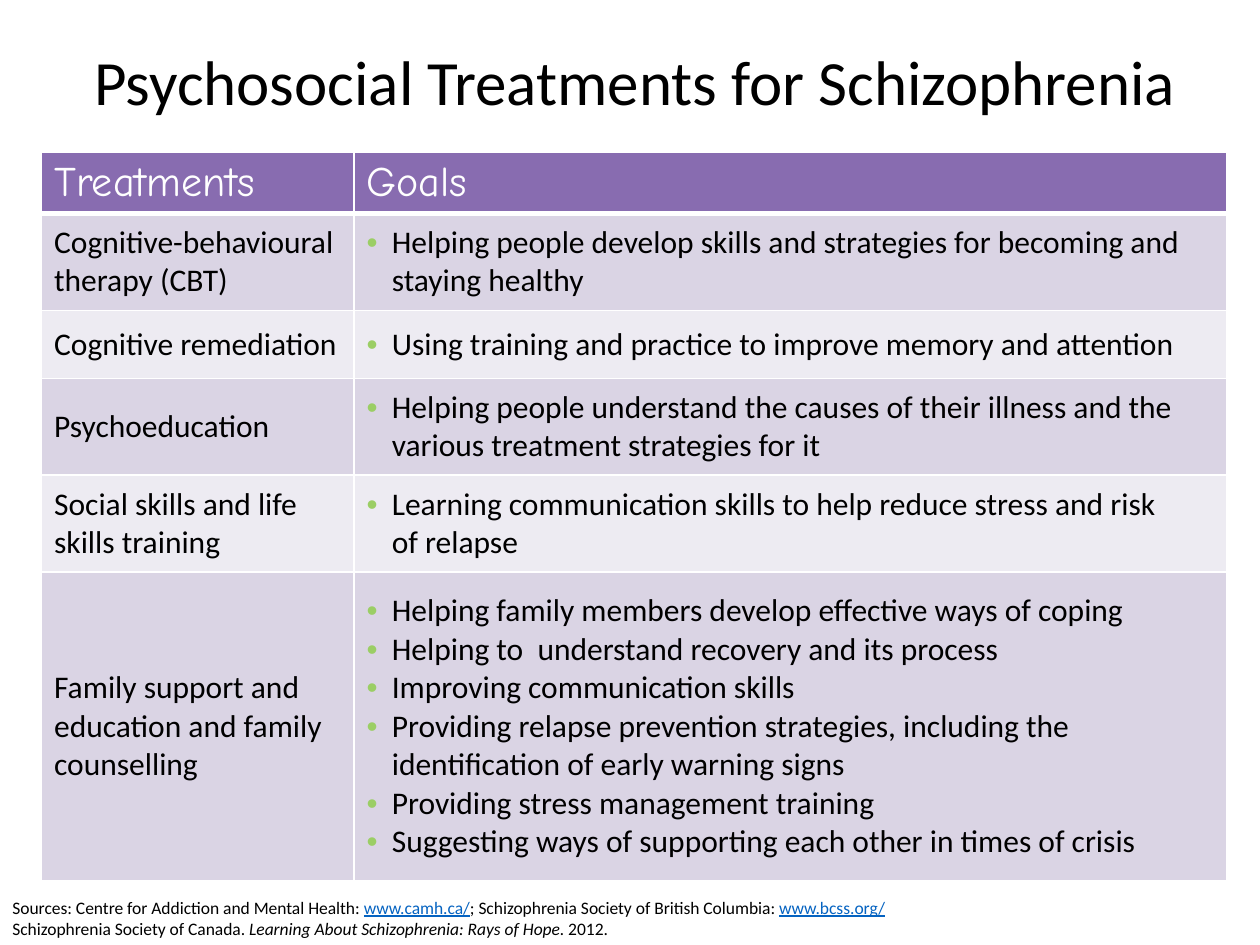
import pptx
import pptx.util
import pptx.dml.color
import pptx.enum.text
import pptx.oxml
import pptx.oxml.ns

COLORS = {"text": "000000", "white": "FFFFFF", "header": "886CB0", "dark": "DAD4E4",
          "light": "EDEBF2", "bullet": "9BCE65", "link": "0563C1"}
TITLE_BOX = (0.054, 0.03, 0.9, 0.12)
TABLE_BOX = (0.033, 0.1613, 0.941, 0.77)
SOURCES_BOX = (0, 0.9413, 0.724, 0.0587)
COLUMN_WEIGHTS = (2.48, 6.93)
ROW_WEIGHTS = (0.48, 0.77, 0.54, 0.77, 0.77, 2.45)
HEADINGS = ("Treatments", "Goals")
TREATMENTS = (
    ("Cognitive-behavioural therapy (CBT)",
     ["Helping people develop skills and strategies for becoming and staying healthy"]),
    ("Cognitive remediation",
     ["Using training and practice to improve memory and attention"]),
    ("Psychoeducation",
     ["Helping people understand the causes of their illness and the various treatment "
      "strategies for it"]),
    ("Social skills and life skills training",
     ["Learning communication skills to help reduce stress and risk \nof relapse"]),
    ("Family support and education and family counselling",
     ["Helping family members develop effective ways of coping",
      "Helping to  understand recovery and its process",
      "Improving communication skills",
      "Providing relapse prevention strategies, including the identification of early "
      "warning signs",
      "Providing stress management training",
      "Suggesting ways of supporting each other in times of crisis"]),
)
SOURCES = (
    (("Sources: Centre for Addiction and Mental Health: ", {}),
     ("www.camh.ca/", {"color": "link", "underline": True}),
     ("; Schizophrenia Society of British Columbia: ", {}),
     ("www.bcss.org/", {"color": "link", "underline": True})),
    (("Schizophrenia Society of Canada. ", {}),
     ("Learning About Schizophrenia: Rays of Hope. ", {"italic": True}),
     ("2012.", {})),
)


def rgb(name):
    """Return the named colour."""
    return pptx.dml.color.RGBColor.from_string(COLORS[name])


def scale(prs, box):
    """Turn shares of the slide into lengths."""
    sides = (prs.slide_width, prs.slide_height) * 2
    return [pptx.util.Emu(round(share * side)) for share, side in zip(box, sides)]


def xml(tag, body, attrs=""):
    """Return a DrawingML element."""
    return pptx.oxml.parse_xml(
        f"<a:{tag} {pptx.oxml.ns.nsdecls('a')} {attrs}>{body}</a:{tag}>")


def add_text(p, text, size=18, font="Calibri", color="text", italic=False, underline=False):
    """Add formatted text to a paragraph, breaking lines at newlines."""
    for i, line in enumerate(text.split("\n")):
        if i:
            p.add_line_break()
        r = p.add_run()
        r.text = line
        r.font.size, r.font.name = pptx.util.Pt(size), font
        r.font.italic, r.font.underline = italic, underline
        r.font.color.rgb = rgb(color)


def paragraphs(tf, items):
    """Pair each item with a paragraph of the text frame."""
    for i, item in enumerate(items):
        yield (tf.add_paragraph() if i else tf.paragraphs[0]), item


def add_bullet(p):
    """Give a paragraph a coloured bullet and a hanging indent."""
    pPr = p._p.get_or_add_pPr()
    indent = pptx.util.Inches(0.2)
    pPr.set("marL", str(indent))
    pPr.set("indent", str(-indent))
    pPr.append(xml("buClr", f'<a:srgbClr val="{COLORS["bullet"]}"/>'))
    pPr.append(xml("buFont", "", 'typeface="Arial"'))
    pPr.append(xml("buChar", "", 'char="•"'))


def style_cell(cell, fill, bottom=1):
    """Fill a cell and draw its white borders."""
    tcPr = cell._tc.get_or_add_tcPr()
    for side, width in (("lnL", 1), ("lnR", 1), ("lnT", 1), ("lnB", bottom)):
        line = f'<a:solidFill><a:srgbClr val="{COLORS["white"]}"/></a:solidFill>'
        tcPr.append(xml(side, line, f'w="{pptx.util.Pt(width)}"'))
    cell.fill.solid()
    cell.fill.fore_color.rgb = rgb(fill)


def add_title(prs, s, box):
    """Place and fill the title placeholder."""
    sp = s.shapes.title
    sp.left, sp.top, sp.width, sp.height = scale(prs, box)
    tf = sp.text_frame
    tf.word_wrap = True
    tf.vertical_anchor = pptx.enum.text.MSO_ANCHOR.MIDDLE
    p = tf.paragraphs[0]
    p.alignment = pptx.enum.text.PP_ALIGN.CENTER
    p.line_spacing = 0.9
    add_text(p, "Psychosocial Treatments for Schizophrenia", size=36)


def add_treatments(prs, s, box):
    """Build the table of treatments and their goals."""
    left, top, width, height = scale(prs, box)
    table = s.shapes.add_table(len(ROW_WEIGHTS), len(COLUMN_WEIGHTS),
                               left, top, width, height).table
    for column, weight in zip(table.columns, COLUMN_WEIGHTS):
        column.width = round(width * weight / sum(COLUMN_WEIGHTS))
    for row, weight in zip(table.rows, ROW_WEIGHTS):
        row.height = round(height * weight / sum(ROW_WEIGHTS))
    for col, heading in enumerate(HEADINGS):
        cell = table.cell(0, col)
        style_cell(cell, "header", bottom=3)
        add_text(cell.text_frame.paragraphs[0], heading, size=24, font="Comic Neue",
                 color="white")
    for row, (treatment, goals) in enumerate(TREATMENTS, 1):
        for col, items in enumerate(([treatment], goals)):
            cell = table.cell(row, col)
            style_cell(cell, "dark" if row % 2 else "light")
            cell.vertical_anchor = pptx.enum.text.MSO_ANCHOR.MIDDLE
            for p, item in paragraphs(cell.text_frame, items):
                if col:
                    add_bullet(p)
                add_text(p, item)


def add_sources(prs, s, box):
    """Write the sources at the foot of the slide."""
    tf = s.shapes.add_textbox(*scale(prs, box)).text_frame
    tf.word_wrap = False
    tf.auto_size = pptx.enum.text.MSO_AUTO_SIZE.SHAPE_TO_FIT_TEXT
    tf.vertical_anchor = pptx.enum.text.MSO_ANCHOR.BOTTOM
    for p, parts in paragraphs(tf, SOURCES):
        for text, style in parts:
            add_text(p, text, size=10, **style)


def main():
    """Build and save the slide."""
    prs = pptx.Presentation()
    prs.slide_width, prs.slide_height = pptx.util.Inches(10), pptx.util.Inches(7.5)
    s = prs.slides.add_slide(prs.slide_layouts[5])
    add_title(prs, s, TITLE_BOX)
    add_treatments(prs, s, TABLE_BOX)
    add_sources(prs, s, SOURCES_BOX)
    prs.save("out.pptx")


if __name__ == "__main__":
    main()
